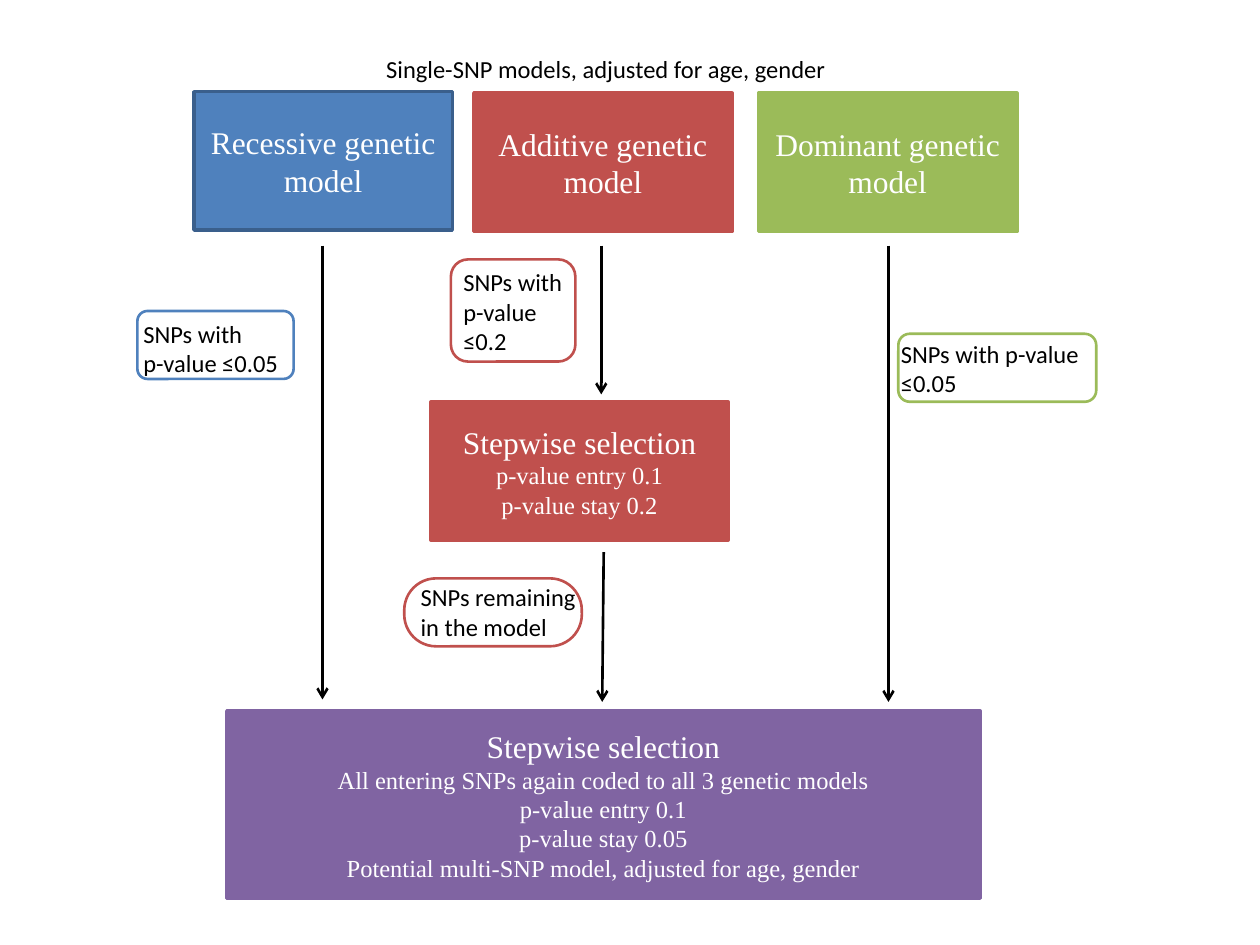
from dataclasses import dataclass

from lxml import etree
from pptx import Presentation
from pptx.dml.color import RGBColor
from pptx.enum.dml import MSO_LINE
from pptx.enum.shapes import MSO_CONNECTOR as Connector, MSO_SHAPE as Preset
from pptx.enum.text import MSO_ANCHOR as Anchor, MSO_AUTO_SIZE as AutoSize, PP_ALIGN as Align
from pptx.oxml.ns import qn
from pptx.util import Cm, Pt

BLUE, RED, GREEN, PURPLE = "4F81BD", "C0504D", "9BBB59", "8064A2"
BLACK, WHITE = "000000", "FFFFFF"


@dataclass
class Place:
    left: float
    top: float
    width: float
    height: float

    def lengths(self) -> tuple:
        return Cm(self.left), Cm(self.top), Cm(self.width), Cm(self.height)


@dataclass
class Step:
    place: Place
    color: str
    title: str
    details: tuple = ()
    border: str = ""


@dataclass
class Label:
    place: Place
    lines: tuple
    align: Align = Align.LEFT


@dataclass
class Outline:
    place: Place
    color: str
    rounding: float = 0.167


@dataclass
class Arrow:
    x1: float
    y1: float
    x2: float
    y2: float


MODEL_SIZE = (5.21, 2.79)
STEPS = [
    Step(Place(9.55, 1.88, *MODEL_SIZE), RED, "Additive genetic model"),
    Step(Place(15.29, 1.88, *MODEL_SIZE), GREEN, "Dominant genetic model"),
    Step(Place(3.91, 1.85, *MODEL_SIZE), BLUE, "Recessive genetic model", border="3A5F8C"),
    Step(Place(8.69, 8.1, 5.99, 2.79), RED, "Stepwise selection",
         ("p-value entry 0.1", "p-value stay 0.2")),
    Step(Place(4.57, 14.33, 15.19, 3.78), PURPLE, "Stepwise selection",
         ("All entering SNPs again coded to all 3 genetic models",
          "p-value entry 0.1", "p-value stay 0.05",
          "Potential multi-SNP model, adjusted for age, gender")),
]
LABELS = [
    Label(Place(4.29, 0.97, 15.85, 0.86),
          ("Single-SNP models, adjusted for age, gender",), Align.CENTER),
    Label(Place(9.09, 5.26, 2.59, 2.06), ("SNPs with p-value ≤0.2",)),
    Label(Place(8.23, 11.61, 3.96, 1.45), ("SNPs remaining in the model",)),
    Label(Place(17.91, 6.71, 4.39, 1.45), ("SNPs with p-value ≤0.05",)),
    Label(Place(2.64, 6.3, 3.58, 1.45), ("SNPs with", "p-value ≤0.05")),
]
OUTLINES = [
    Outline(Place(9.09, 5.23, 2.51, 2.06), RED),
    Outline(Place(8.15, 11.66, 3.58, 1.37), RED, 0.468),
    Outline(Place(2.77, 6.27, 3.15, 1.37), BLUE, 0.149),
    Outline(Place(18.11, 6.73, 3.99, 1.37), GREEN),
]
ARROWS = [
    Arrow(12.12, 4.95, 12.12, 7.95),
    Arrow(17.91, 4.95, 17.91, 14.15),
    Arrow(6.5, 4.95, 6.5, 14.1),
    Arrow(12.17, 11.13, 12.14, 14.15),
]


def paint(color_format, color: str) -> None:
    color_format.rgb = RGBColor.from_string(color)


def set_line(line, color: str, width: float) -> None:
    line.fill.solid()
    paint(line.color, color)
    line.width = Pt(width)


def write_lines(frame, lines: list, font: str, color: str, align: Align) -> None:
    """Write (text, size) pairs as one paragraph each."""
    frame.word_wrap = True
    for index, (text, size) in enumerate(lines):
        para = frame.add_paragraph() if index else frame.paragraphs[0]
        para.alignment = align
        span = para.add_run()
        span.text = text
        span.font.name = font
        span.font.size = Pt(size)
        paint(span.font.color, color)


def draw_step(page, step: Step) -> None:
    box = page.shapes.add_shape(Preset.RECTANGLE, *step.place.lengths())
    box.shadow.inherit = False
    box.fill.solid()
    paint(box.fill.fore_color, step.color)
    set_line(box.line, step.border or step.color, 2)
    box.text_frame.vertical_anchor = Anchor.MIDDLE
    lines = [(step.title, 18)] + [(detail, 14) for detail in step.details]
    write_lines(box.text_frame, lines, "Times New Roman", WHITE, Align.CENTER)


def draw_label(page, label: Label) -> None:
    box = page.shapes.add_textbox(*label.place.lengths())
    lines = [(line, 14) for line in label.lines]
    write_lines(box.text_frame, lines, "Calibri", BLACK, label.align)
    box.text_frame.auto_size = AutoSize.SHAPE_TO_FIT_TEXT


def draw_outline(page, outline: Outline) -> None:
    box = page.shapes.add_shape(Preset.ROUNDED_RECTANGLE, *outline.place.lengths())
    box.adjustments[0] = outline.rounding
    box.shadow.inherit = False
    box.fill.background()
    set_line(box.line, outline.color, 1.5)


def draw_arrow(page, arrow: Arrow) -> None:
    connector = page.shapes.add_connector(
        Connector.STRAIGHT, Cm(arrow.x1), Cm(arrow.y1), Cm(arrow.x2), Cm(arrow.y2))
    set_line(connector.line, BLACK, 1.5)
    connector.line.dash_style = MSO_LINE.SOLID
    properties = connector._element.spPr
    etree.SubElement(properties.find(qn("a:ln")), qn("a:tailEnd"), type="arrow")
    etree.SubElement(properties, qn("a:effectLst"))


def main() -> None:
    deck = Presentation()
    deck.slide_width, deck.slide_height = Cm(25.4), Cm(19.05)
    page = deck.slides.add_slide(deck.slide_layouts[6])
    for draw, items in ((draw_step, STEPS), (draw_label, LABELS),
                        (draw_outline, OUTLINES), (draw_arrow, ARROWS)):
        for item in items:
            draw(page, item)
    deck.save("out.pptx")


if __name__ == "__main__":
    main()
